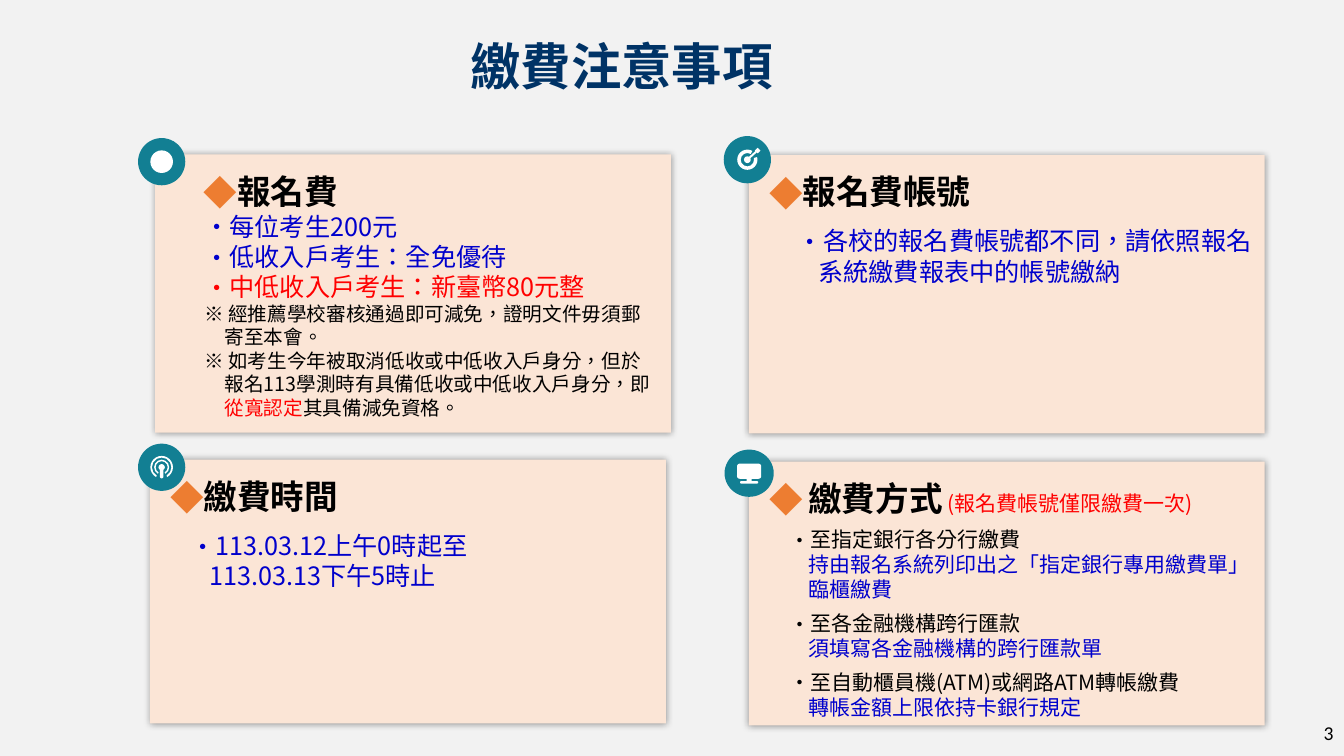
from dataclasses import dataclass

from lxml import etree
from pptx import Presentation
from pptx import util as u
from pptx.dml.color import RGBColor
from pptx.enum import shapes, text
from pptx.oxml import ns

CARDS = [
    {"box": (3.91, 3.89, 13, 7.01), "right": 0.51, "paragraphs": [
        ("◆", 0.3, 0.41, 0, [("報名費", "heading", "black")]),
        ("•", 1.24, -0.51, 0, [("每位考生200元", "body", "blue")]),
        ("•", 1.24, -0.51, 0, [("低收入戶考生：全免優待", "body", "blue")]),
        ("•", 1.24, -0.51, 0, [("中低收入戶考生：新臺幣80元整", "body", "red")]),
        (None, 1.24, -0.51, 0, [
            ("※ 經推薦學校審核通過即可減免，證明文件毋須郵寄至本會。", "note", "black")]),
        (None, 1.24, -0.51, 0, [
            ("※ 如考生今年被取消低收或中低收入戶身分，但於報名113學測時有具備低收或中低收入戶身分，即",
             "note", "black"),
            ("從寬認定", "note", "red"),
            ("其具備減免資格。", "note", "black")]),
    ]},
    {"box": (18.87, 3.91, 13, 7.01), "right": 0.25, "paragraphs": [
        ("◆", 0.74, -0.74, 0, [("報名費帳號", "heading", "black")]),
        ("•", 1.24, -0.51, 10, [
            ("各校的報名費帳號都不同，請依照報名系統繳費報表中的帳號繳納", "body", "blue")]),
    ]},
    {"box": (3.78, 11.58, 13, 6.65), "right": 0.25, "paragraphs": [
        ("◆", 0.3, -0.3, 0, [("繳費時間", "heading", "black")]),
        ("•", 0.99, -0.48, 10, [
            ("113.03.12上午0時起至\n113.03.13下午5時止", "body", "blue")]),
    ]},
    {"box": (18.87, 11.63, 13, 6.65), "right": 0.25, "paragraphs": [
        ("◆", 0.99, -0.99, 0, [
            ("繳費方式", "heading", "black"),
            (" (報名費帳號僅限繳費一次)", "method", "red")]),
        ("•", 0.99, -0.48, 6, [
            ("至指定銀行各分行繳費\n", "method", "black"),
            ("持由報名系統列印出之「指定銀行專用繳費單」臨櫃繳費", "method", "blue")]),
        ("•", 0.99, -0.48, 6, [
            ("至各金融機構跨行匯款\n", "method", "black"),
            ("須填寫各金融機構的跨行匯款單", "method", "blue")]),
        ("•", 0.99, -0.48, 6, [
            ("至自動櫃員機(ATM)或網路ATM轉帳繳費\n", "method", "black"),
            ("轉帳金額上限依持卡銀行規定", "method", "blue")]),
    ]},
]

KIND = shapes.MSO_SHAPE
DEGREE = 0.6
BADGES = [
    ((18.26, 11.33, 1.24, 1.19), [
        (KIND.ROUNDED_RECTANGLE, 0, -0.05, 0.61, 0.38, 0, [0.17]),
        (KIND.RECTANGLE, 0, 0.18, 0.13, 0.06, 0, []),
        (KIND.ROUNDED_RECTANGLE, 0, 0.23, 0.46, 0.06, 0, [0.5])]),
    ((3.48, 11.18, 1.19, 1.19), [
        (KIND.BLOCK_ARC, 0, 0, 0.57, 0.57, 0, [120 * DEGREE, 60 * DEGREE, 0.07]),
        (KIND.BLOCK_ARC, 0, 0, 0.38, 0.38, 0, [120 * DEGREE, 60 * DEGREE, 0.1]),
        (KIND.OVAL, 0, 0, 0.16, 0.16, 0, []),
        (KIND.ROUNDED_RECTANGLE, 0, 0.16, 0.09, 0.24, 0, [0.5])]),
    ((3.48, 3.48, 1.19, 1.19), [
        (KIND.OVAL, 0, 0, 0.57, 0.57, 0, [])]),
    ((18.24, 3.43, 1.19, 1.19), [
        (KIND.BLOCK_ARC, 0, 0, 0.51, 0.51, 0, [345 * DEGREE, 300 * DEGREE, 0.17]),
        (KIND.OVAL, 0, 0, 0.17, 0.17, 0, []),
        (KIND.RECTANGLE, 0.13, -0.12, 0.38, 0.05, -42, []),
        (KIND.DIAMOND, 0.26, -0.23, 0.14, 0.14, 0, [])]),
]


@dataclass(frozen=True)
class Theme:
    font = "Noto Sans CJK SC"
    number_font = "Calibri"
    sizes = {"title": 36, "heading": 24, "body": 18, "method": 15, "note": 14}
    colors = {"background": "F2F2F2", "card": "FBE5D6", "badge": "127F93",
              "white": "FFFFFF", "navy": "003366", "black": "000000",
              "blue": "0000CC", "red": "FF0000", "diamond": "ED7D31"}
    bold = ("title", "heading")

    def color(self, name):
        return RGBColor.from_string(self.colors[name])


THEME = Theme()


def add_child(parent, tag, **attributes):
    child = etree.SubElement(parent, ns.qn(tag))
    for name, value in attributes.items():
        child.set(name, str(value))
    return child


def write_text(paragraph, content, *, style, color, font=THEME.font):
    for index, line in enumerate(content.split("\n")):
        if index:
            paragraph.add_line_break()
        if not line:
            continue
        run = paragraph.add_run()
        run.text = line
        run.font.name = font
        run.font.size = u.Pt(THEME.sizes[style])
        run.font.bold = style in THEME.bold
        run.font.color.rgb = THEME.color(color)
        properties = run.font._element
        properties.set("lang", "zh-TW")
        add_child(properties, "a:ea", typeface=font)


def place(shape, box):
    shape.left, shape.top, shape.width, shape.height = map(u.Cm, box)


def set_margins(frame, left, top, right, bottom):
    frame.margin_left, frame.margin_top = u.Cm(left), u.Cm(top)
    frame.margin_right, frame.margin_bottom = u.Cm(right), u.Cm(bottom)
    frame.word_wrap = True
    frame.auto_size = text.MSO_AUTO_SIZE.NONE


def set_bullet(paragraph, bullet, left, indent):
    properties = paragraph._p.get_or_add_pPr()
    properties.set("marL", str(u.Cm(left)))
    properties.set("indent", str(u.Cm(indent)))
    if bullet is None:
        add_child(properties, "a:buNone")
        return
    if bullet == "◆":
        color = add_child(properties, "a:buClr")
        add_child(color, "a:srgbClr", val=THEME.colors["diamond"])
    add_child(properties, "a:buFont", typeface=THEME.font)
    add_child(properties, "a:buChar", char=bullet)


def add_shadow(shape):
    effects = add_child(shape._element.spPr, "a:effectLst")
    shadow = add_child(effects, "a:outerShdw", blurRad=u.Pt(5), dist=0, dir=0,
                       algn="ctr", rotWithShape=0)
    color = add_child(shadow, "a:srgbClr", val=THEME.colors["black"])
    add_child(color, "a:alpha", val=40000)


def fill_card(shape, card):
    place(shape, card["box"])
    shape.fill.solid()
    shape.fill.fore_color.rgb = THEME.color("card")
    shape.line.fill.background()
    add_shadow(shape)
    frame = shape.text_frame
    set_margins(frame, 0.51, 0.51, card["right"], 0.13)
    frame.vertical_anchor = text.MSO_ANCHOR.TOP
    for index, (bullet, left, indent, before, runs) in enumerate(card["paragraphs"]):
        paragraph = frame.add_paragraph() if index else frame.paragraphs[0]
        set_bullet(paragraph, bullet, left, indent)
        style = runs[0][1]
        leading = 1.08 if style == "heading" else 1.2
        paragraph.line_spacing = u.Pt(THEME.sizes[style] * leading)
        paragraph.space_before = u.Pt(before)
        paragraph.space_after = u.Pt(0)
        paragraph.alignment = text.PP_ALIGN.LEFT
        for content, run_style, color in runs:
            write_text(paragraph, content, style=run_style, color=color)


def add_plain_shape(group, kind, box, color):
    shape = group.shapes.add_shape(kind, *map(u.Cm, box))
    shape.shadow.inherit = False
    shape.fill.solid()
    shape.fill.fore_color.rgb = THEME.color(color)
    shape.line.fill.background()
    return shape


def add_badge(slide, box, parts):
    group = slide.shapes.add_group_shape()
    add_plain_shape(group, KIND.OVAL, box, "badge")
    left, top, width, height = box
    for kind, x, y, part_width, part_height, rotation, adjustments in parts:
        part_box = (left + width / 2 + x - part_width / 2,
                    top + height / 2 + y - part_height / 2, part_width, part_height)
        shape = add_plain_shape(group, kind, part_box, "white")
        shape.rotation = rotation
        for index, value in enumerate(adjustments):
            shape.adjustments[index] = value


def main():
    presentation = Presentation()
    presentation.slide_width, presentation.slide_height = u.Cm(33.87), u.Cm(19.05)
    slide = presentation.slides.add_slide(presentation.slide_layouts[4])
    slide.background.fill.solid()
    slide.background.fill.fore_color.rgb = THEME.color("background")

    title = slide.shapes.title
    place(title, (10.19, 0.41, 10.95, 2.46))
    set_margins(title.text_frame, 0.33, 0.18, 0.33, 0.18)
    title.text_frame.vertical_anchor = text.MSO_ANCHOR.MIDDLE
    heading = title.text_frame.paragraphs[0]
    heading.alignment = text.PP_ALIGN.CENTER
    write_text(heading, "繳費注意事項", style="title", color="navy")

    for index, card in enumerate(CARDS, start=1):
        fill_card(slide.placeholders[index], card)
    for box, parts in BADGES:
        add_badge(slide, box, parts)

    page_number = slide.shapes.add_textbox(*map(u.Cm, (26.24, 18.03, 7.62, 1.02)))
    page_number.text_frame.word_wrap = True
    paragraph = page_number.text_frame.paragraphs[0]
    paragraph.alignment = text.PP_ALIGN.RIGHT
    write_text(paragraph, "3", style="note", color="black", font=THEME.number_font)

    presentation.save("out.pptx")


if __name__ == "__main__":
    main()
